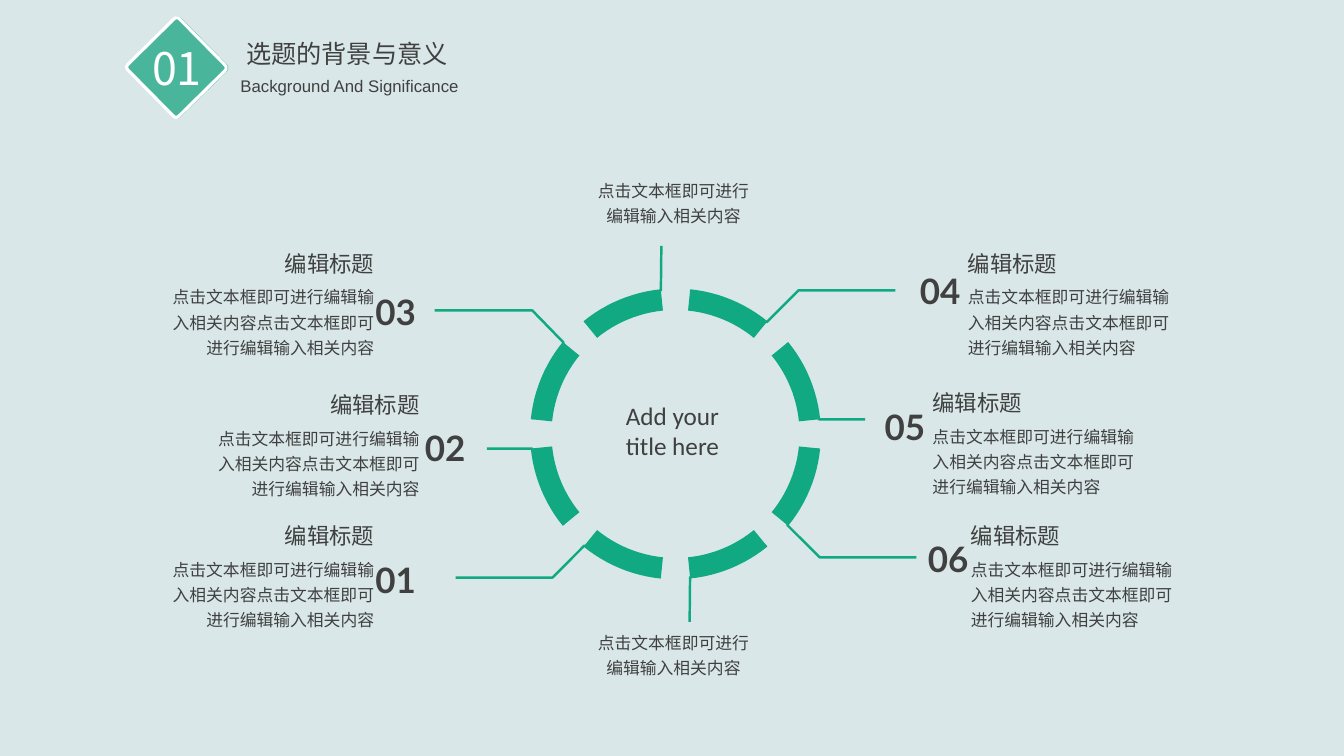
from dataclasses import dataclass
from math import cos, radians, sin

from lxml import etree
from pptx import Presentation
from pptx.dml.color import RGBColor
from pptx.enum.shapes import MSO_SHAPE
from pptx.enum.text import MSO_ANCHOR, MSO_AUTO_SIZE, PP_ALIGN
from pptx.oxml.ns import qn
from pptx.util import Inches, Pt

LEFT, MID, RIGHT = PP_ALIGN.LEFT, PP_ALIGN.CENTER, PP_ALIGN.RIGHT
TOP, MIDDLE = MSO_ANCHOR.TOP, MSO_ANCHOR.MIDDLE
FIT = MSO_AUTO_SIZE.SHAPE_TO_FIT_TEXT
ROUND = MSO_SHAPE.ROUNDED_RECTANGLE

BACK = RGBColor(0xD9, 0xE7, 0xE8)
GREEN = RGBColor(0x10, 0xA9, 0x81)
MINT = RGBColor(0x49, 0xB5, 0x9A)
WHITE = RGBColor(0xFF, 0xFF, 0xFF)
DARK = RGBColor(0x40, 0x40, 0x40)

HAN = "Noto Sans CJK SC"
HEAD = "编辑标题"
NOTE = "点击文本框即可进行编辑输入相关内容"

# Ring: eight arcs, each inset from the ends of its 45 degree octant
HUB = (6.70, 4.305)
OUTER, INNER = 1.43, 1.23
STEP, GAP, PARTS = 45, 5.8, 12

Point = tuple[float, float]
Box = tuple[float, float, float, float]


@dataclass
class Style:
    size: float
    font: str = HAN
    color: RGBColor = DARK
    bold: bool = False
    space: float = 1.0
    anchor: MSO_ANCHOR = TOP


@dataclass
class Item:
    num: str
    spot: Point
    body: Point
    align: PP_ALIGN


TITLE, SUB = Style(18), Style(12, "Arial")
BADGE, CORE = Style(32, color=WHITE), Style(18, "Calibri")
NUM = Style(25, "Lato", bold=True, anchor=MIDDLE)
NAME, BODY = Style(16), Style(12, space=1.25)

LABELS = [
    ("选题的背景与意义", (0.73, 0.33, 5.42, 0.4), TITLE),
    (" Background And Significance", (0.7, 0.7, 5.49, 0.3), SUB),
    ("01", (1.37, 0.35, 0.77, 0.64), BADGE),
    ("Add your title here", (6.09, 3.92, 1.16, 0.64), CORE),
    (NOTE, (5.76, 1.69, 1.84, 0.61), BODY),
    (NOTE, (5.76, 6.18, 1.84, 0.61), BODY),
]

ITEMS = [
    Item("01", (3.61, 5.52), (1.59, 5.45), RIGHT),
    Item("02", (4.1, 4.21), (2.04, 4.15), RIGHT),
    Item("03", (3.61, 2.86), (1.59, 2.75), RIGHT),
    Item("04", (9.01, 2.65), (9.5, 2.75), LEFT),
    Item("05", (8.66, 4.0), (9.15, 4.13), LEFT),
    Item("06", (9.09, 5.31), (9.53, 5.45), LEFT),
]

# Outer ends of the leaders, clockwise from the right
ENDS: list[list[Point]] = [
    [(8.13, 5.53), (9.09, 5.53)],
    [(6.84, 6.17)],
    [(5.48, 5.73), (4.52, 5.73)],
    [(4.83, 4.45)],
    [(5.28, 3.08), (4.31, 3.08)],
    [(6.56, 2.44)],
    [(7.92, 2.88), (8.88, 2.88)],
    [(8.58, 4.16)],
]


def arc(turn: int, radius: float) -> list[Point]:
    """Points along one octant, clockwise."""
    span = STEP - 2 * GAP
    angles = [radians(turn * STEP + GAP + span * i / PARTS)
              for i in range(PARTS + 1)]
    return [(HUB[0] + radius * cos(a), HUB[1] + radius * sin(a))
            for a in angles]


def outline(slide, points: list[Point], close: bool):
    """A filled shape when closed, otherwise a green stroke."""
    spots = [(Inches(x), Inches(y)) for x, y in points]
    pen = slide.shapes.build_freeform(*spots[0], scale=1.0)
    pen.add_line_segments(spots[1:], close=close)
    shape = pen.convert_to_shape()
    shape.shadow.inherit = False
    if close:
        shape.fill.solid()
        shape.fill.fore_color.rgb = GREEN
        shape.line.fill.background()
    else:
        shape.fill.background()
        shape.line.color.rgb = GREEN
        shape.line.width = Pt(1.75)


def diamond(slide, box: Box, round_by: float, color: RGBColor, edge: bool):
    shape = slide.shapes.add_shape(ROUND, *map(Inches, box))
    shape.rotation = 45.4
    shape.adjustments[0] = round_by
    shape.shadow.inherit = False
    shape.fill.solid()
    shape.fill.fore_color.rgb = color
    if edge:
        shape.line.color.rgb = WHITE
        shape.line.width = Pt(2.25)
    else:
        shape.line.fill.background()


def write(slide, text: str, box: Box, style: Style, align: PP_ALIGN = MID):
    frame = slide.shapes.add_textbox(*map(Inches, box)).text_frame
    para = frame.paragraphs[0]
    run = para.add_run()
    run.text = text
    run.font.color.rgb = style.color
    formats = {
        frame: {"word_wrap": True, "auto_size": FIT,
                "vertical_anchor": style.anchor},
        para: {"alignment": align, "line_spacing": style.space},
        run.font: {"size": Pt(style.size), "name": style.font,
                   "bold": style.bold},
    }
    for part, values in formats.items():
        for key, value in values.items():
            setattr(part, key, value)
    east = etree.SubElement(run._r.get_or_add_rPr(), qn("a:ea"))
    east.set("typeface", style.font)


def entry(slide, item: Item):
    """Number, heading and body of one item."""
    left, top = item.body
    shift = 0.63 if item.align == RIGHT else 0
    write(slide, item.num, (*item.spot, 0.63, 0.46), NUM)
    write(slide, NOTE * 2, (left, top, 2.22, 1.11), BODY, item.align)
    write(slide, HEAD, (left + shift, top - 0.32, 1.59, 0.37), NAME,
          item.align)


def main():
    deck = Presentation()
    deck.slide_width, deck.slide_height = Inches(13.33), Inches(7.5)
    slide = deck.slides.add_slide(deck.slide_layouts[6])
    slide.background.fill.solid()
    slide.background.fill.fore_color.rgb = BACK

    diamond(slide, (1.39, 0.3, 0.74, 0.74), 0.059, GREEN, False)
    diamond(slide, (1.39, 0.31, 0.72, 0.72), 0.05, MINT, True)
    for turn, ends in enumerate(ENDS):
        outline(slide, arc(turn, OUTER) + ends, False)
    for turn in range(len(ENDS)):
        outline(slide, arc(turn, OUTER) + arc(turn, INNER)[::-1], True)
    for text, box, style in LABELS:
        write(slide, text, box, style)
    for item in ITEMS:
        entry(slide, item)
    deck.save("out.pptx")


if __name__ == "__main__":
    main()
